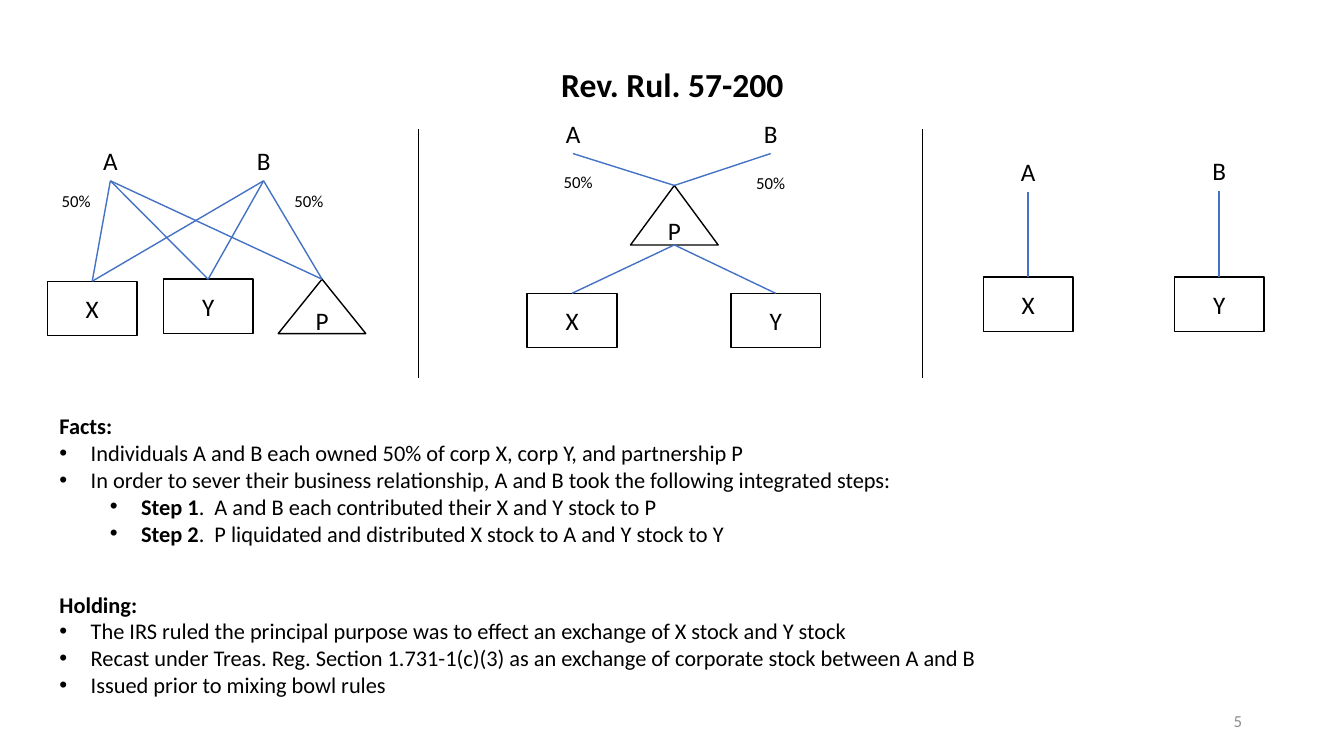
"""Build the Rev. Rul. 57-200 slide with its three ownership diagrams."""
from dataclasses import dataclass
from typing import Optional

from lxml.etree import SubElement
from pptx import Presentation
from pptx.dml.color import RGBColor
from pptx.enum.shapes import MSO_CONNECTOR, MSO_SHAPE
from pptx.enum.text import MSO_ANCHOR, MSO_AUTO_SIZE, PP_ALIGN
from pptx.oxml.ns import qn
from pptx.util import Inches, Pt

FONT = "Calibri"
COLORS = {"ink": "000000", "link": "4472C4", "number": "8C8C8C"}
COLS, ROWS = 133.33, 75
CELL = Inches(0.1)


@dataclass(frozen=True)
class Kind:
    width: float
    height: float
    size: int = 18
    preset: Optional[MSO_SHAPE] = None
    inset: Optional[int] = None


OWNER = Kind(3.5, 4.04)
SHARE = Kind(4.9, 3, size=12)
CORP = Kind(8.9, 5.4, preset=MSO_SHAPE.RECTANGLE, inset=0)
SMALL_PARTNERSHIP = Kind(8.7, 5.4, preset=MSO_SHAPE.ISOSCELES_TRIANGLE)
PARTNERSHIP = Kind(8.7, 5.9, preset=MSO_SHAPE.ISOSCELES_TRIANGLE)


@dataclass(frozen=True)
class Node:
    text: str
    kind: Kind
    center: float
    top: float


@dataclass(frozen=True)
class Stage:
    nodes: tuple[Node, ...]
    links: tuple[str, ...]
    shares: tuple[Node, ...] = ()


@dataclass(frozen=True)
class Line:
    text: str
    lead: str = ""
    level: int = 0
    before: float = 0
    bullet: bool = True


STAGES = (
    Stage((Node("A", OWNER, 10.95, 13.9), Node("B", OWNER, 26.15, 13.9),
           Node("X", CORP, 9.15, 27.9), Node("Y", CORP, 20.65, 27.7),
           Node("P", SMALL_PARTNERSHIP, 31.95, 27.7)),
          ("AX", "BX", "AY", "BY", "AP", "BP"),
          (Node("50%", SHARE, 7.55, 18.4), Node("50%", SHARE, 30.65, 18.4))),
    Stage((Node("A", OWNER, 56.85, 11.2), Node("B", OWNER, 76.45, 11.2),
           Node("P", PARTNERSHIP, 66.9, 18.4),
           Node("X", CORP, 56.75, 29.1), Node("Y", CORP, 76.95, 29.1)),
          ("AP", "BP", "PX", "PY"),
          (Node("50%", SHARE, 57.35, 16.5), Node("50%", SHARE, 76.45, 16.6))),
    Stage((Node("A", OWNER, 102, 15), Node("B", OWNER, 120.95, 14.9),
           Node("X", CORP, 102, 27.5), Node("Y", CORP, 120.95, 27.5)),
          ("AX", "BY")),
)
DIVIDERS = (41.5, 91.5)
LINES = (
    Line("", lead="Facts:", bullet=False),
    Line("Individuals A and B each owned 50% of corp X, corp Y, and partnership P"),
    Line("In order to sever their business relationship, A and B took the following integrated steps:"),
    Line(".  A and B each contributed their X and Y stock to P", lead="Step 1", level=1),
    Line(".  P liquidated and distributed X stock to A and Y stock to Y", lead="Step 2", level=1),
    Line("", lead="Holding:", before=31.5, bullet=False),
    Line("The IRS ruled the principal purpose was to effect an exchange of X stock and Y stock"),
    Line("Recast under Treas. Reg. Section 1.731-1(c)(3) as an exchange of corporate stock between A and B"),
    Line("Issued prior to mixing bowl rules"),
)


def grid(n: float) -> int:
    return round(n * CELL)


def rgb(name: str) -> RGBColor:
    return RGBColor.from_string(COLORS[name])


def place(sp, left: float, top: float, width: float, height: float) -> None:
    sp.left, sp.top, sp.width, sp.height = map(grid, (left, top, width, height))


def add_run(p, text: str, size: int, bold: bool = False, color: str = "ink") -> None:
    r = p.add_run()
    r.text = text
    r.font.name, r.font.size, r.font.bold = FONT, Pt(size), bold
    r.font.color.rgb = rgb(color)


def draw_node(s, node: Node):
    kind = node.kind
    box = [grid(n) for n in (node.center - kind.width / 2, node.top, kind.width, kind.height)]
    if kind.preset is None:
        sp = s.shapes.add_textbox(*box)
    else:
        sp = s.shapes.add_shape(kind.preset, *box)
        sp.shadow.inherit = False
        sp.fill.background()
        sp.line.color.rgb, sp.line.width = rgb("ink"), Pt(1)
    tf = sp.text_frame
    tf.word_wrap = False
    tf.vertical_anchor = MSO_ANCHOR.MIDDLE if kind.preset else MSO_ANCHOR.TOP
    if kind.inset is not None:
        tf.margin_left = tf.margin_top = tf.margin_right = tf.margin_bottom = kind.inset
    p = tf.paragraphs[0]
    p.alignment = PP_ALIGN.CENTER
    add_run(p, node.text, kind.size)
    return sp


def draw_line(s, x1: int, y1: int, x2: int, y2: int, color: str):
    line = s.shapes.add_connector(MSO_CONNECTOR.STRAIGHT, x1, y1, x2, y2)
    line.line.color.rgb, line.line.width = rgb(color), Pt(1)
    SubElement(line.element.spPr, qn("a:effectLst"))
    return line


def draw_stage(s, stage: Stage) -> None:
    shapes = {node.text: draw_node(s, node) for node in stage.nodes}
    for upper, lower in stage.links:
        a, b = shapes[upper], shapes[lower]
        line = draw_line(s, a.left + a.width // 2, a.top + a.height,
                         b.left + b.width // 2, b.top, "link")
        if upper != "P":
            line.begin_connect(a, 2)
        line.end_connect(b, 0)
    for share in stage.shares:
        draw_node(s, share)


def write_line(p, line: Line) -> None:
    p.level, p.line_spacing = line.level, 1.0
    p.space_before, p.space_after = Pt(line.before), Pt(0)
    hang = Inches(0.31) if line.bullet else 0
    pPr = p._p.get_or_add_pPr()
    pPr.set("marL", str(hang + line.level * Inches(0.5)))
    pPr.set("indent", str(-hang))
    if line.bullet:
        SubElement(pPr, qn("a:buFont"), typeface="Arial")
        SubElement(pPr, qn("a:buChar"), char="•")
    else:
        SubElement(pPr, qn("a:buNone"))
    if line.lead:
        add_run(p, line.lead, 16, bold=True)
    if line.text:
        add_run(p, line.text, 16)


def main() -> None:
    prs = Presentation()
    prs.slide_width, prs.slide_height = grid(COLS), grid(ROWS)
    s = prs.slides.add_slide(prs.slide_layouts[1])
    title, body = s.placeholders

    place(title, 9.2, 5.8, 115, 6.7)
    tf = title.text_frame
    tf.auto_size, tf.vertical_anchor = MSO_AUTO_SIZE.NONE, MSO_ANCHOR.TOP
    p = tf.paragraphs[0]
    p.alignment = PP_ALIGN.CENTER
    add_run(p, "Rev. Rul. 57-200", 24, bold=True)

    place(body, 4.9, 40.4, 123.5, 29.6)
    tf = body.text_frame
    tf.auto_size, tf.vertical_anchor = MSO_AUTO_SIZE.NONE, MSO_ANCHOR.TOP
    for i, line in enumerate(LINES):
        write_line(tf.add_paragraph() if i else tf.paragraphs[0], line)

    for stage in STAGES:
        draw_stage(s, stage)
    for x in DIVIDERS:
        draw_line(s, grid(x), grid(12.8), grid(x), grid(37.5), "ink")

    number = s.shapes.add_textbox(grid(94.2), grid(69.5), grid(30), grid(4))
    tf = number.text_frame
    tf.word_wrap, tf.vertical_anchor = True, MSO_ANCHOR.MIDDLE
    p = tf.paragraphs[0]
    p.alignment = PP_ALIGN.RIGHT
    add_run(p, "5", 12, color="number")
    prs.save("out.pptx")


if __name__ == "__main__":
    main()
